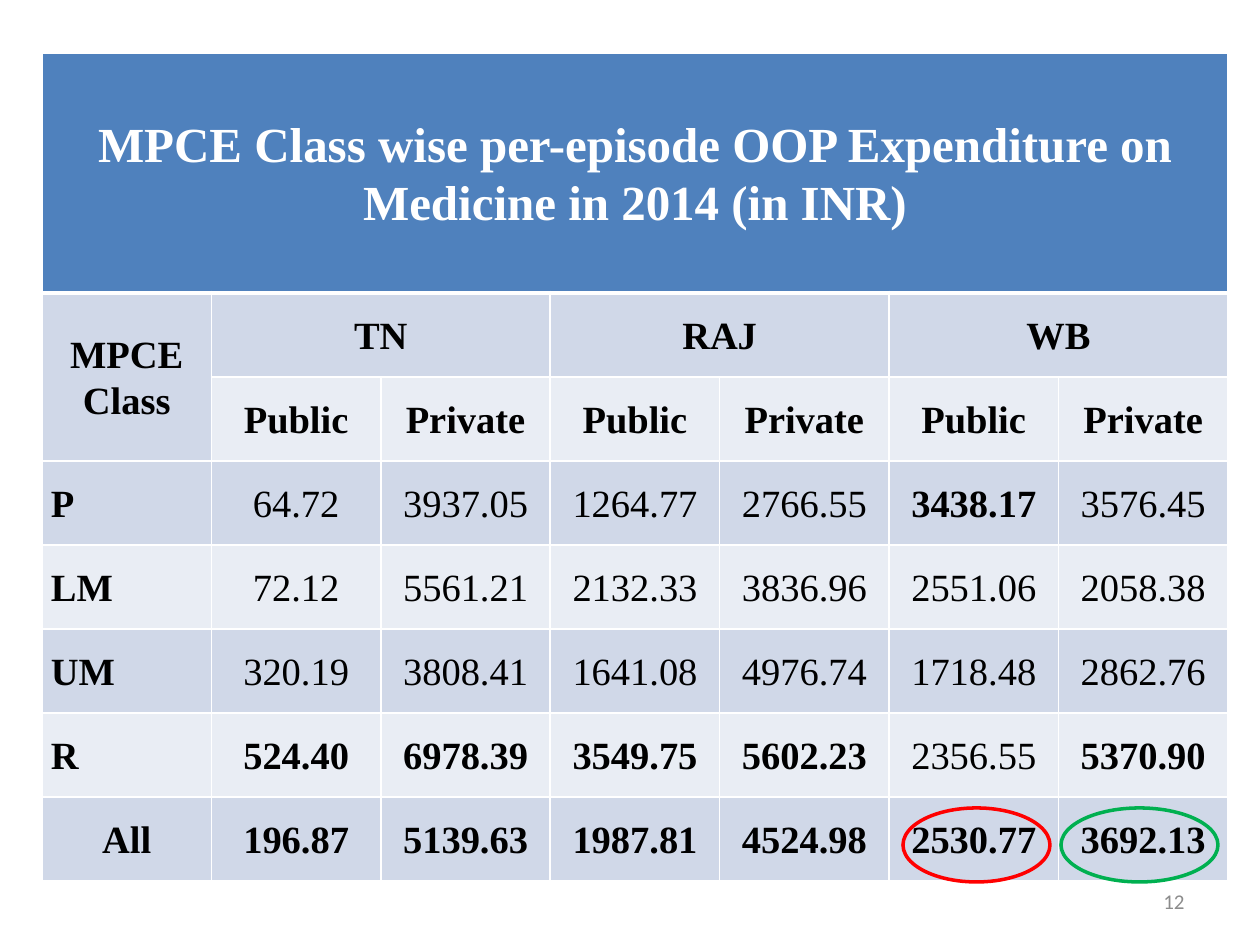
from lxml.etree import SubElement
from pptx import Presentation
from pptx.dml.color import RGBColor
from pptx.enum.shapes import MSO_SHAPE
from pptx.enum.text import MSO_ANCHOR, PP_ALIGN
from pptx.oxml.ns import qn
from pptx.util import Emu, Pt

WHITE = RGBColor(0xFF, 0xFF, 0xFF)
BLACK = RGBColor(0x00, 0x00, 0x00)
GREY = RGBColor(0x8C, 0x8C, 0x8C)
HEADER_BLUE = RGBColor(0x4F, 0x81, 0xBD)
BAND_DARK = RGBColor(0xD0, 0xD8, 0xE8)
BAND_LIGHT = RGBColor(0xE9, 0xED, 0xF4)
RED = RGBColor(0xFF, 0x00, 0x00)
GREEN = RGBColor(0x00, 0xB0, 0x50)

TITLE = "MPCE Class wise per-episode OOP Expenditure on Medicine in 2014 (in INR)"
STATES = ["TN", "RAJ", "WB"]
SECTORS = ["Public", "Private"]
CLASS_ROWS = [
    ["P", "64.72", "3937.05", "1264.77", "2766.55", "3438.17", "3576.45"],
    ["LM", "72.12", "5561.21", "2132.33", "3836.96", "2551.06", "2058.38"],
    ["UM", "320.19", "3808.41", "1641.08", "4976.74", "1718.48", "2862.76"],
    ["R", "524.40", "6978.39", "3549.75", "5602.23", "2356.55", "5370.90"],
]
ALL_ROW = ["All", "196.87", "5139.63", "1987.81", "4524.98", "2530.77", "3692.13"]


def px(length):
    return Emu(round(length * 914400 / 126))


def write(frame, text, size=22, font="Times New Roman", color=BLACK, bold=False,
          align=PP_ALIGN.CENTER, spacing=None):
    frame.word_wrap = True
    para = frame.paragraphs[0]
    para.alignment = align
    para.line_spacing = spacing
    span = para.add_run()
    span.text = text
    span.font.size = Pt(size)
    span.font.name = font
    span.font.bold = bold
    span.font.color.rgb = color


def add_border(cell, side, width):
    line = SubElement(cell._tc.get_or_add_tcPr(), qn(f"a:ln{side}"), w=str(Pt(width)))
    fill = SubElement(line, qn("a:solidFill"))
    SubElement(fill, qn("a:srgbClr"), val=str(WHITE))


class SlideBuilder:
    def __init__(self, slide):
        self.slide = slide

    def table(self, left, top, width, row_heights, columns):
        frame = self.slide.shapes.add_table(
            len(row_heights), columns, px(left), px(top), px(width), px(sum(row_heights)))
        table = frame.table
        for row, height in zip(table.rows, row_heights):
            row.height = px(height)
        for index in range(len(row_heights)):
            for column in range(columns):
                self.style_cell(table.cell(index, column), index)
        return table

    def style_cell(self, cell, row):
        """Set borders before the fill, as the schema orders them."""
        for side in "LRTB":
            under_header = (row, side) in ((0, "B"), (1, "T"))
            add_border(cell, side, 3 if under_header else 1)
        cell.fill.solid()
        bands = (BAND_LIGHT, BAND_DARK)
        cell.fill.fore_color.rgb = bands[row % 2] if row else HEADER_BLUE
        cell.vertical_anchor = MSO_ANCHOR.MIDDLE
        cell.margin_left = cell.margin_right = px(9)
        cell.margin_top = cell.margin_bottom = 0

    def cell(self, table, row, column, text, rows=1, columns=1, **style):
        cell = table.cell(row, column)
        if rows * columns > 1:
            cell.merge(table.cell(row + rows - 1, column + columns - 1))
        write(cell.text_frame, text, spacing=1.07, **style)

    def label(self, left, top, width, height, text, **style):
        box = self.slide.shapes.add_textbox(px(left), px(top), px(width), px(height))
        box.text_frame.vertical_anchor = MSO_ANCHOR.MIDDLE
        write(box.text_frame, text, **style)

    def ring(self, left, top, width, height, color):
        ring = self.slide.shapes.add_shape(
            MSO_SHAPE.OVAL, px(left), px(top), px(width), px(height))
        ring.shadow.inherit = False
        ring.fill.background()
        ring.line.color.rgb = color
        ring.line.width = Pt(2)


def fill_table(builder, table):
    builder.cell(table, 0, 0, TITLE, columns=7, size=28, color=WHITE, bold=True)
    builder.cell(table, 1, 0, "MPCE Class", rows=2, bold=True)
    for index, state in enumerate(STATES):
        first = 1 + index * len(SECTORS)
        builder.cell(table, 1, first, state, columns=len(SECTORS), bold=True)
        for offset, sector in enumerate(SECTORS):
            builder.cell(table, 2, first + offset, sector, bold=True)

    # Bold marks the class with the highest spending in each column.
    highest = [max(values, key=float) for values in list(zip(*CLASS_ROWS))[1:]]
    for row, (name, *values) in enumerate(CLASS_ROWS, start=3):
        builder.cell(table, row, 0, name, bold=True, align=PP_ALIGN.LEFT)
        for column, (value, top_value) in enumerate(zip(values, highest), start=1):
            builder.cell(table, row, column, value, bold=value == top_value)
    for column, text in enumerate(ALL_ROW):
        builder.cell(table, 7, column, text, bold=True)


def main():
    deck = Presentation()
    deck.slide_width, deck.slide_height = px(1260), px(945)
    builder = SlideBuilder(deck.slides.add_slide(deck.slide_layouts[6]))

    table = builder.table(42, 53, 1186, [240] + [84] * 7, columns=7)
    fill_table(builder, table)
    builder.label(903, 876, 294, 50, "12", size=12, font="Calibri", color=GREY,
                  align=PP_ALIGN.RIGHT)
    builder.ring(903, 808, 147, 74, RED)
    builder.ring(1061, 808, 157, 74, GREEN)
    deck.save("out.pptx")


if __name__ == "__main__":
    main()
